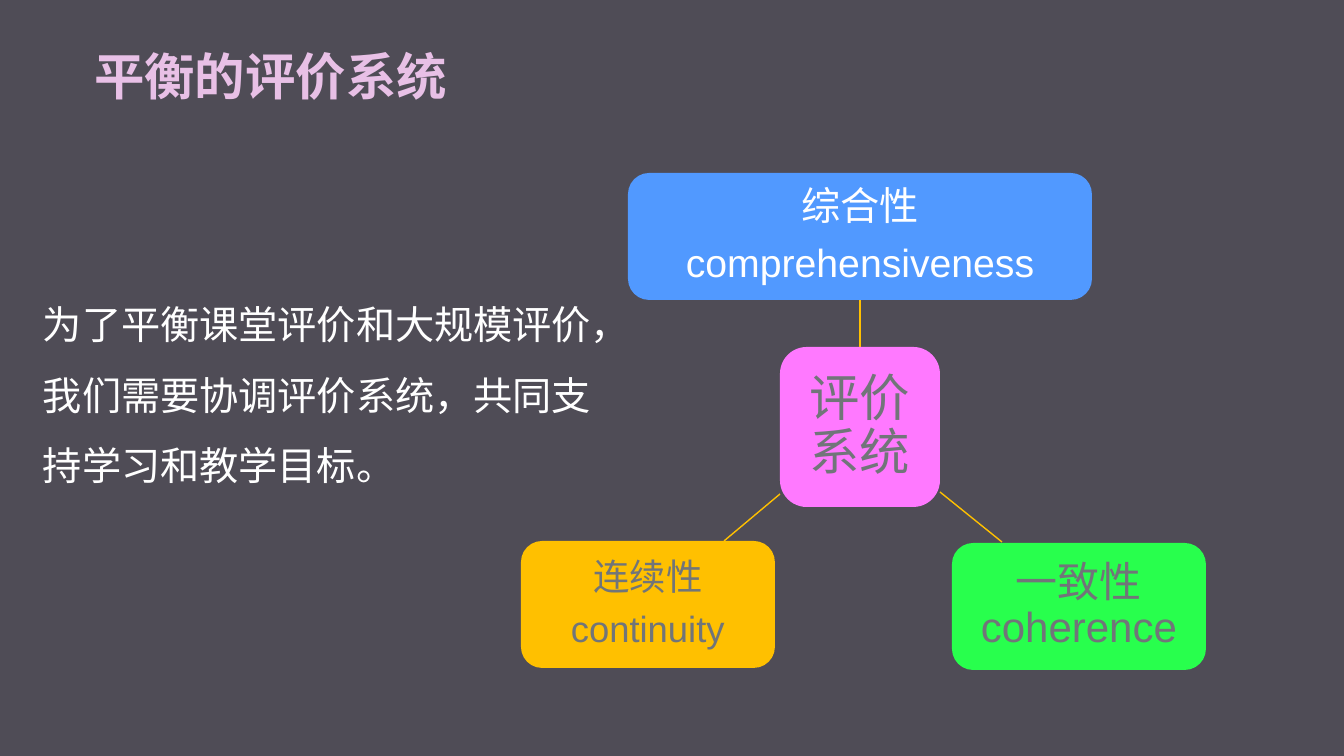
from lxml import etree
from pptx import Presentation
from pptx.dml.color import RGBColor
from pptx.enum.shapes import MSO_CONNECTOR, MSO_SHAPE
from pptx.enum.text import MSO_ANCHOR as ANCHOR, MSO_AUTO_SIZE as FIT, PP_ALIGN as ALIGN
from pptx.oxml.ns import qn
from pptx.util import Pt

W, H = 1344, 756
SCALE = 12192000 / W
COLORS = {
    "back": "717579", "veil": "1D1022", "title": "E8C0E6", "white": "FFFFFF",
    "pink": "FF79FF", "blue": "5199FF", "green": "28FF4D", "amber": "FFC000",
}


def px(*lengths):
    return [round(n * SCALE) for n in lengths]


def add_run(p, text, size, color, bold=False):
    r = p.add_run()
    r.text = text
    r.font.name = "Arial"
    r.font.size = Pt(size)
    r.font.bold = bold
    r.font.color.rgb = RGBColor.from_string(COLORS[color])


prs = Presentation()
prs.slide_width, prs.slide_height = px(W, H)
s = prs.slides.add_slide(prs.slide_layouts[5])

# Background with a translucent dark veil
s.background.fill.solid()
s.background.fill.fore_color.rgb = RGBColor.from_string(COLORS["back"])
veil = s.shapes.add_shape(MSO_SHAPE.RECTANGLE, *px(0, 0, W, H))
veil.shadow.inherit = False
veil.line.fill.background()
veil.fill.solid()
veil.fill.fore_color.rgb = RGBColor.from_string(COLORS["veil"])
veil_color = veil.fill._xPr.find(qn("a:solidFill"))[0]
etree.SubElement(veil_color, qn("a:alpha"), val="40000")
s.shapes._spTree.insert(2, veil._element)

# Title
title = s.shapes.title
title.left, title.top, title.width, title.height = px(84, 44, 1177, 67)
tf = title.text_frame
tf.word_wrap = True
tf.auto_size = FIT.NONE
tf.vertical_anchor = ANCHOR.BOTTOM
p = tf.paragraphs[0]
p.alignment = ALIGN.LEFT
p.line_spacing = 0.9
add_run(p, "平衡的评价系统", 36, "title", bold=True)

# Spokes from the centre to the three qualities
for ends in [(860, 347, 860, 300), (940, 492, 1002, 542), (780, 494, 724, 541)]:
    spoke = s.shapes.add_connector(MSO_CONNECTOR.STRAIGHT, *px(*ends))
    spoke.line.color.rgb = RGBColor.from_string(COLORS["amber"])
    spoke.line.width = Pt(1)
    etree.SubElement(spoke._element.spPr, qn("a:effectLst"))

# Nodes: box, inset, fill, text colour, size, paragraphs
nodes = [
    ((780, 347, 160, 160), 10, "pink", "back", 36, ["评价系统"]),
    ((628, 173, 464, 127), 8, "blue", "white", 28, ["综合性", "comprehensiveness"]),
    ((952, 543, 254, 127), 8, "green", "back", 30, ["一致性 coherence"]),
    ((521, 541, 254, 127), 7, "amber", "back", 26, ["连续性", "continuity"]),
]
for box, inset, fill, color, size, lines in nodes:
    sp = s.shapes.add_shape(MSO_SHAPE.ROUNDED_RECTANGLE, *px(*box))
    sp.shadow.inherit = False
    sp.line.fill.background()
    sp.fill.solid()
    sp.fill.fore_color.rgb = RGBColor.from_string(COLORS[fill])
    tf = sp.text_frame
    tf.word_wrap = True
    tf.vertical_anchor = ANCHOR.MIDDLE
    tf.margin_left, tf.margin_top, tf.margin_right, tf.margin_bottom = px(*[inset] * 4)
    for i, line in enumerate(lines):
        p = tf.add_paragraph() if i else tf.paragraphs[0]
        p.alignment = ALIGN.CENTER
        p.line_spacing = 0.9
        p.space_after = Pt(round(size * 0.35))
        add_run(p, line, size, color)

# Explanation on the left
note = s.shapes.add_textbox(*px(33, 272, 583, 224))
tf = note.text_frame
tf.word_wrap = True
tf.auto_size = FIT.SHAPE_TO_FIT_TEXT
p = tf.paragraphs[0]
p.line_spacing = 1.5
add_run(p, "为了平衡课堂评价和大规模评价，我们需要协调评价系统，共同支持学习和教学目标。", 28, "white")

prs.save("out.pptx")
